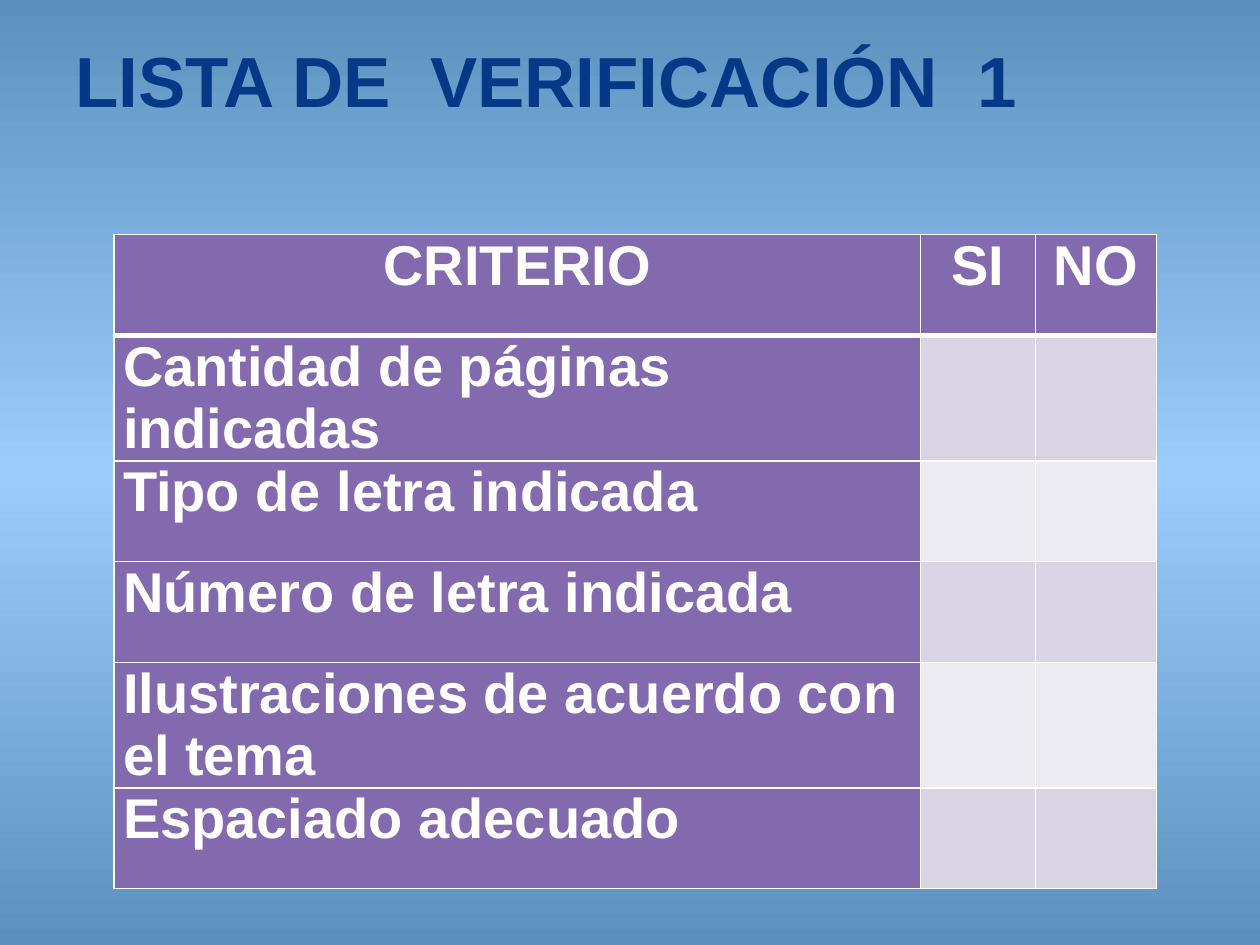
from copy import deepcopy
from dataclasses import dataclass

from lxml.etree import SubElement
from pptx import Presentation
from pptx.dml.color import RGBColor
from pptx.enum.text import MSO_ANCHOR, MSO_AUTO_SIZE, PP_ALIGN
from pptx.oxml.ns import qn
from pptx.util import Cm, Pt


@dataclass(frozen=True)
class Theme:
    font: str = "Arial"
    edge: str = "5C91BE"
    glow: str = "9BCDFC"
    navy: str = "043988"
    white: str = "FFFFFF"
    plum: str = "836AAE"
    bands: tuple = ("D9D4E3", "EDEBF2")
    head: float = 40.5
    body: float = 32
    thin: float = 1
    thick: float = 3


def write(frame, text, *, size, color, font, bold=True, align=PP_ALIGN.LEFT):
    line = frame.paragraphs[0]
    line.alignment = align
    run = line.add_run()
    run.text = text
    run.font.name = font
    run.font.size = Pt(size)
    run.font.bold = bold
    run.font.color.rgb = RGBColor.from_string(color)


def border(cell, side, width, color):
    props = cell._tc.get_or_add_tcPr()
    line = SubElement(props, qn(f"a:ln{side}"), w=str(Pt(width)))
    fill = SubElement(line, qn("a:solidFill"))
    SubElement(fill, qn("a:srgbClr"), val=color)


class Deck:
    def __init__(self, theme):
        self.theme = theme
        self.show = Presentation()
        self.show.slide_width = Cm(25.4)
        self.show.slide_height = Cm(19.05)
        self.slide = self.show.slides.add_slide(self.show.slide_layouts[5])

    def back(self):
        look = self.theme
        fill = self.slide.background.fill
        fill.gradient()
        fill.gradient_angle = 270
        first = next(self.slide.element.iter(qn("a:gs")))
        first.addnext(deepcopy(first))
        places = (0, 0.5, 1)
        colors = (look.edge, look.glow, look.edge)
        for stop, place, color in zip(fill.gradient_stops, places, colors):
            stop.position = place
            stop.color.rgb = RGBColor.from_string(color)

    def title(self, text, left, top, width, height):
        look = self.theme
        box = self.slide.shapes.title
        box.left, box.top = Cm(left), Cm(top)
        box.width, box.height = Cm(width), Cm(height)
        frame = box.text_frame
        frame.word_wrap = True
        frame.auto_size = MSO_AUTO_SIZE.NONE
        frame.vertical_anchor = MSO_ANCHOR.TOP
        frame.margin_top = 0
        write(frame, text, size=look.head, color=look.navy, font=look.font)

    def table(self, heads, items, left, top, widths, height):
        rows = [heads] + [[item, "", ""] for item in items]
        grid = self.slide.shapes.add_table(
            len(rows), len(heads), Cm(left), Cm(top),
            Cm(sum(widths)), Cm(height * len(rows))).table
        for col, width in zip(grid.columns, widths):
            col.width = Cm(width)
        for r, row in enumerate(rows):
            for c, text in enumerate(row):
                self.cell(grid.cell(r, c), text, r, c)

    def cell(self, cell, text, r, c):
        look = self.theme
        widths = {"L": look.thin, "R": look.thin,
                  "T": look.thick if r == 1 else look.thin,
                  "B": look.thick if r == 0 else look.thin}
        for side, width in widths.items():
            border(cell, side, width, look.white)
        cell.fill.solid()
        color = look.plum if r == 0 or c == 0 else look.bands[(r - 1) % 2]
        cell.fill.fore_color.rgb = RGBColor.from_string(color)
        cell.margin_left = cell.margin_right = Cm(0.18)
        cell.margin_top = cell.margin_bottom = 0
        if text:
            align = PP_ALIGN.CENTER if r == 0 else PP_ALIGN.LEFT
            write(cell.text_frame, text, size=look.body, color=look.white,
                  font=look.font, align=align)


def main():
    deck = Deck(Theme())
    deck.back()
    deck.title("LISTA DE  VERIFICACIÓN  1", 1.27, 0.74, 22.86, 3.18)
    deck.table(
        ["CRITERIO", "SI", "NO"],
        ["Cantidad de páginas indicadas",
         "Tipo de letra indicada",
         "Número de letra indicada",
         "Ilustraciones de acuerdo con el tema",
         "Espaciado adecuado"],
        2.3, 4.73, (16.26, 2.31, 2.44), 2.03)
    deck.show.save("out.pptx")


if __name__ == "__main__":
    main()
